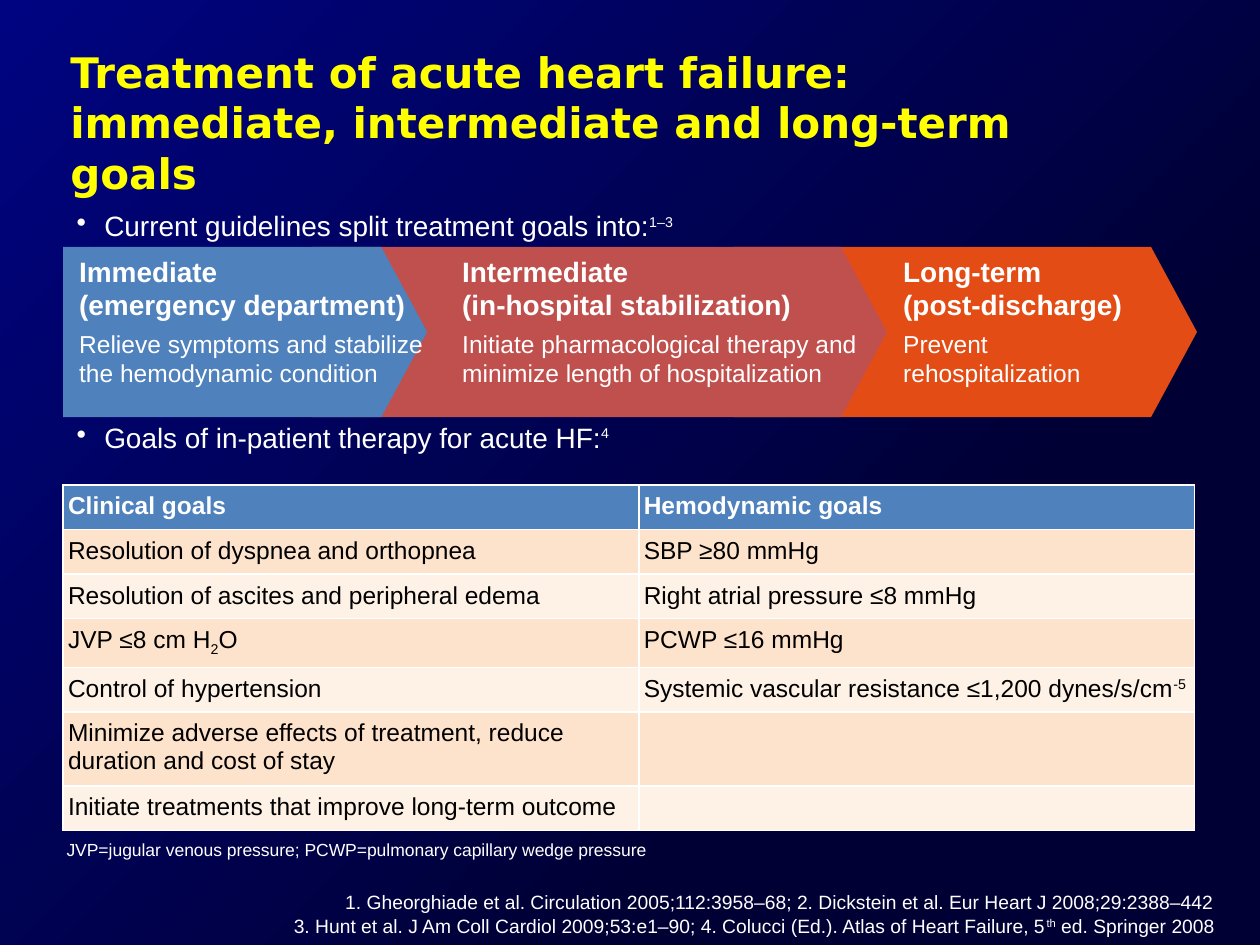
import pptx
import pptx.dml.color
import pptx.enum.shapes
import pptx.enum.text
import pptx.oxml
import pptx.oxml.ns
import pptx.util
from lxml import etree

RGB = pptx.dml.color.RGBColor
NAVY = RGB(0x00, 0x00, 0x35)
BLUE = RGB(0x00, 0x04, 0x80)
WHITE = RGB(0xFF, 0xFF, 0xFF)
BLACK = RGB(0x00, 0x00, 0x00)
YELLOW = RGB(0xFF, 0xFF, 0x00)
STEEL = RGB(0x4F, 0x81, 0xBD)
BRICK = RGB(0xC0, 0x50, 0x4D)
ORANGE = RGB(0xE4, 0x4C, 0x16)
PEACH = RGB(0xFE, 0xE3, 0xCC)
CREAM = RGB(0xFE, 0xF2, 0xE7)

SCALE = 9144
RIGHT = pptx.enum.text.PP_ALIGN.RIGHT
qn = pptx.oxml.ns.qn


def px(*nums):
    return [pptx.util.Emu(num * SCALE) for num in nums]


class Deck:
    font = "Arial"
    color = WHITE

    def __init__(self, wide, high):
        self.prs = pptx.Presentation()
        self.prs.slide_width, self.prs.slide_height = px(wide, high)
        self.slide = self.prs.slides.add_slide(self.prs.slide_layouts[6])

    def back(self, stops):
        fill = self.slide.background.fill
        fill.gradient()
        for stop, (place, color) in zip(fill.gradient_stops, stops):
            stop.position = place
            stop.color.rgb = color
        grad = next(self.slide.element.iter(qn("a:gradFill")))
        grad.remove(grad.find(qn("a:lin")))
        round = etree.SubElement(grad, qn("a:path"), {"path": "circle"})
        etree.SubElement(round, qn("a:fillToRect"), l="100000", t="100000")

    def line(self, para, parts, size, bold=False, color=None, font=None,
             align=None, after=0, bullet=False):
        para.alignment = align
        para.space_before = pptx.util.Pt(0)
        para.space_after = pptx.util.Pt(after)
        if bullet:
            props = para._p.get_or_add_pPr()
            props.set("marL", str(22 * SCALE))
            props.set("indent", str(-22 * SCALE))
            etree.SubElement(props, qn("a:buChar"), char="•")
        para.font.size = pptx.util.Pt(size)
        para.font.bold = bold
        para.font.name = font or self.font
        para.font.color.rgb = color or self.color
        for part in parts:
            if part == "\n":
                para.add_line_break()
                continue
            text, base, small = (part, 0, None) if isinstance(part, str) else part
            run = para.add_run()
            run.text = text
            if base:
                run._r.get_or_add_rPr().set("baseline", str(base * 1000))
            if small:
                run.font.size = pptx.util.Pt(small)

    def text(self, box, *paras):
        frame = self.slide.shapes.add_textbox(*px(*box)).text_frame
        frame.word_wrap = True
        for i, (parts, style) in enumerate(paras):
            para = frame.add_paragraph() if i else frame.paragraphs[0]
            self.line(para, parts, **style)

    def arrow(self, box, color):
        kind = pptx.enum.shapes.MSO_SHAPE.PENTAGON
        shape = self.slide.shapes.add_shape(kind, *px(*box))
        shape.adjustments[0] = 0.27
        shape.shadow.inherit = False
        shape.fill.solid()
        shape.fill.fore_color.rgb = color
        shape.line.fill.background()

    def edge(self, cell):
        props = cell._tc.get_or_add_tcPr()
        for i, side in enumerate(("lnL", "lnR", "lnT", "lnB")):
            line = etree.Element(qn("a:" + side), w="12700")
            fill = etree.SubElement(line, qn("a:solidFill"))
            etree.SubElement(fill, qn("a:srgbClr"), val=str(WHITE))
            props.insert(i, line)

    def table(self, box, cols, highs, rows):
        frame = self.slide.shapes.add_table(len(rows), len(cols), *px(*box))
        table = frame.table
        for col, wide in zip(table.columns, px(*cols)):
            col.width = wide
        for row, high in zip(table.rows, px(*highs)):
            row.height = high
        for i, row in enumerate(rows):
            for j, parts in enumerate(row):
                cell = table.cell(i, j)
                cell.margin_left, cell.margin_right = px(4, 4)
                cell.margin_top, cell.margin_bottom = px(6, 6)
                cell.fill.solid()
                cell.fill.fore_color.rgb = (CREAM, PEACH)[i % 2] if i else STEEL
                self.edge(cell)
                self.line(cell.text_frame.paragraphs[0], parts, 14,
                          bold=not i, color=BLACK if i else WHITE)


def main():
    deck = Deck(1000, 750)
    deck.back([(0.3, NAVY), (1, BLUE)])
    title = "Treatment of acute heart failure: immediate, intermediate and long-term goals"
    deck.text((46, 32, 811, 125), ([title], dict(
        size=24, bold=True, color=YELLOW, font="DejaVu Sans")))

    point = dict(size=16, bullet=True)
    for top, label, note in (
            (161, "Current guidelines split treatment goals into:", "1–3"),
            (329, "Goals of in-patient therapy for acute HF:", "4")):
        deck.text((51, top, 896, 36), ([label, (note, 40, 14)], point))

    for left, wide, color in ((582, 368, ORANGE), (248, 456, BRICK), (50, 289, STEEL)):
        deck.arrow((left, 196, wide, 135), color)
    for left, wide, head, body in (
            (53, 309, ["Immediate", "\n", "(emergency department)"],
             ["Relieve symptoms and stabilize the hemodynamic condition"]),
            (357, 352, ["Intermediate", "\n", "(in-hospital stabilization)"],
             ["Initiate pharmacological therapy and minimize length of hospitalization"]),
            (707, 215, ["Long-term", "\n", "(post-discharge)"],
             ["Prevent", "\n", "rehospitalization"])):
        deck.text((left, 197, wide, 124),
                  (head, dict(size=16, bold=True, after=4)), (body, dict(size=14)))

    deck.table((50, 385, 898, 268), (457, 441), (35, 35, 35, 35, 35, 58, 35), [
        (["Clinical goals"], ["Hemodynamic goals"]),
        (["Resolution of dyspnea and orthopnea"], ["SBP ≥80 mmHg"]),
        (["Resolution of ascites and peripheral edema"],
         ["Right atrial pressure ≤8 mmHg"]),
        (["JVP ≤8 cm H", ("2", -25, None), "O"], ["PCWP ≤16 mmHg"]),
        (["Control of hypertension"],
         ["Systemic vascular resistance ≤1,200 dynes/s/cm", ("-5", 30, None)]),
        (["Minimize adverse effects of treatment, reduce duration and cost of stay"], []),
        (["Initiate treatments that improve long-term outcome"], []),
    ])

    deck.text((43, 661, 843, 27), (
        ["JVP=jugular venous pressure; PCWP=pulmonary capillary wedge pressure"],
        dict(size=10)))
    cite = dict(size=11, align=RIGHT)
    deck.text((191, 702, 783, 47), (
        ["1. Gheorghiade et al. Circulation 2005;112:3958–68; "
         "2. Dickstein et al. Eur Heart J 2008;29:2388–442"], cite), (
        ["3. Hunt et al. J Am Coll Cardiol 2009;53:e1–90; "
         "4. Colucci (Ed.). Atlas of Heart Failure, 5", ("th", 30, None),
         " ed. Springer 2008"], cite))
    deck.prs.save("out.pptx")


if __name__ == "__main__":
    main()
